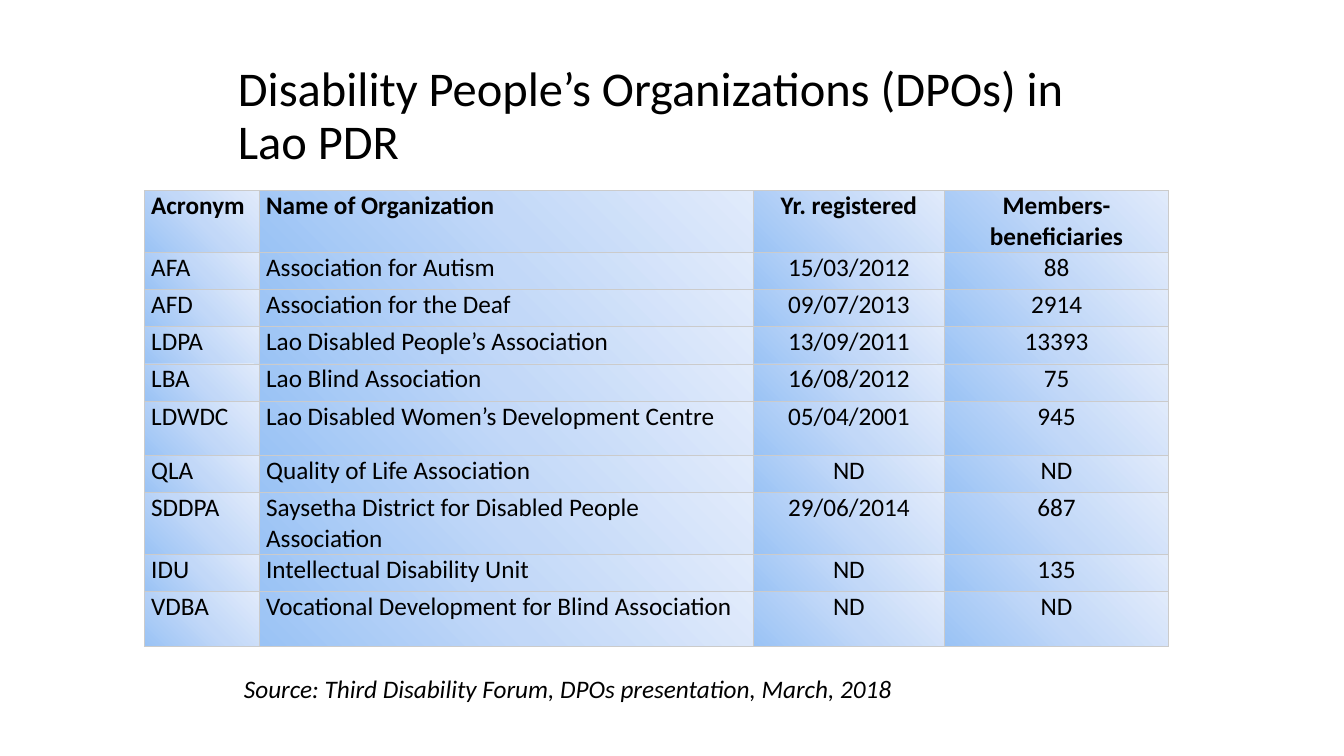
from dataclasses import dataclass

import pptx
import pptx.dml.color
import pptx.enum.text
import pptx.oxml
import pptx.oxml.ns
import pptx.util
from pptx.util import Inches


@dataclass(frozen=True)
class Theme:
    font: str = "Calibri"
    ink: str = "000000"
    border: str = "CBCBCB"
    glow: tuple = ((0, "9AC3F5"), (50, "C2D8F8"), (100, "E1EBFB"))
    title_size: float = 34.6
    body_size: float = 18


THEME = Theme()
ALIGN = pptx.enum.text.PP_ALIGN

TITLE = "Disability People’s Organizations (DPOs) in Lao PDR"
SOURCE = "Source: Third Disability Forum, DPOs presentation, March, 2018"
COLUMN_WIDTHS = (1.14, 4.9, 1.9, 2.22)
COLUMN_ALIGNS = (ALIGN.LEFT, ALIGN.LEFT, ALIGN.CENTER, ALIGN.CENTER)
LOW_ROW, TALL_ROW = 0.37, 0.54
TALL_ACRONYMS = ("Acronym", "LDWDC", "SDDPA", "VDBA")
ROWS = (
    ("Acronym", "Name of Organization", "Yr. registered", "Members-\nbeneficiaries"),
    ("AFA", "Association for Autism", "15/03/2012", "88"),
    ("AFD", "Association for the Deaf", "09/07/2013", "2914"),
    ("LDPA", "Lao Disabled People’s Association", "13/09/2011", "13393"),
    ("LBA", "Lao Blind Association", "16/08/2012", "75"),
    ("LDWDC", "Lao Disabled Women’s Development Centre", "05/04/2001", "945"),
    ("QLA", "Quality of Life Association", "ND", "ND"),
    ("SDDPA", "Saysetha District for Disabled People Association", "29/06/2014", "687"),
    ("IDU", "Intellectual Disability Unit", "ND", "135"),
    ("VDBA", "Vocational Development for Blind Association", "ND", "ND"),
)


def format_text(frame, size, align=ALIGN.LEFT, bold=False, italic=False):
    for para in frame.paragraphs:
        para.alignment = align
        for span in para.runs:
            span.font.name = THEME.font
            span.font.size = pptx.util.Pt(size)
            span.font.bold = bold
            span.font.italic = italic
            span.font.color.rgb = pptx.dml.color.RGBColor.from_string(THEME.ink)


def paint_cell(cell):
    """Give the cell thin borders and a glow from its bottom left corner."""
    namespace = pptx.oxml.ns.nsdecls("a")
    properties = cell._tc.get_or_add_tcPr()
    for side in "LRTB":
        properties.append(pptx.oxml.parse_xml(
            f'<a:ln{side} {namespace} w="6350"><a:solidFill>'
            f'<a:srgbClr val="{THEME.border}"/></a:solidFill></a:ln{side}>'))
    stops = "".join(f'<a:gs pos="{percent * 1000}"><a:srgbClr val="{color}"/></a:gs>'
                    for percent, color in THEME.glow)
    properties.append(pptx.oxml.parse_xml(
        f'<a:gradFill {namespace} rotWithShape="1"><a:gsLst>{stops}</a:gsLst>'
        '<a:path path="circle"><a:fillToRect t="100000" r="100000"/></a:path>'
        '</a:gradFill>'))


def add_title(page, left, top, width, height):
    title = page.shapes.title
    title.left, title.top, title.width, title.height = left, top, width, height
    frame = title.text_frame
    frame.text = TITLE
    frame.word_wrap = True
    frame.auto_size = pptx.enum.text.MSO_AUTO_SIZE.NONE
    frame.vertical_anchor = pptx.enum.text.MSO_ANCHOR.MIDDLE
    frame.paragraphs[0].line_spacing = 0.9
    format_text(frame, THEME.title_size)


def add_organizations(page, left, top, width, height):
    table = page.shapes.add_table(
        len(ROWS), len(COLUMN_WIDTHS), left, top, width, height).table
    table.horz_banding = False
    table.first_row = False
    for column, share in zip(table.columns, COLUMN_WIDTHS):
        column.width = int(width * share / sum(COLUMN_WIDTHS))
    for row, values in zip(table.rows, ROWS):
        row.height = Inches(TALL_ROW if values[0] in TALL_ACRONYMS else LOW_ROW)
        for cell, value, align in zip(row.cells, values, COLUMN_ALIGNS):
            cell.text = value
            cell.margin_left = cell.margin_right = Inches(0.07)
            cell.margin_top = cell.margin_bottom = 0
            format_text(cell.text_frame, THEME.body_size, align, bold=values is ROWS[0])
            paint_cell(cell)


def add_source(page, left, top, width, height):
    frame = page.shapes.add_textbox(left, top, width, height).text_frame
    frame.text = SOURCE
    frame.word_wrap = True
    frame.margin_left = frame.margin_right = Inches(0.05)
    frame.margin_top = frame.margin_bottom = Inches(0.05)
    format_text(frame, THEME.body_size, italic=True)


def main():
    deck = pptx.Presentation()
    deck.slide_width, deck.slide_height = Inches(13.33), Inches(7.5)
    page = deck.slides.add_slide(deck.slide_layouts.get_by_name("Title Only"))
    add_title(page, Inches(2.26), Inches(0.54), Inches(9), Inches(1.25))
    add_organizations(page, Inches(1.43), Inches(1.89), Inches(10.16), Inches(4.52))
    add_source(page, Inches(2.37), Inches(6.63), Inches(7.34), Inches(0.39))
    deck.save("out.pptx")


if __name__ == "__main__":
    main()
